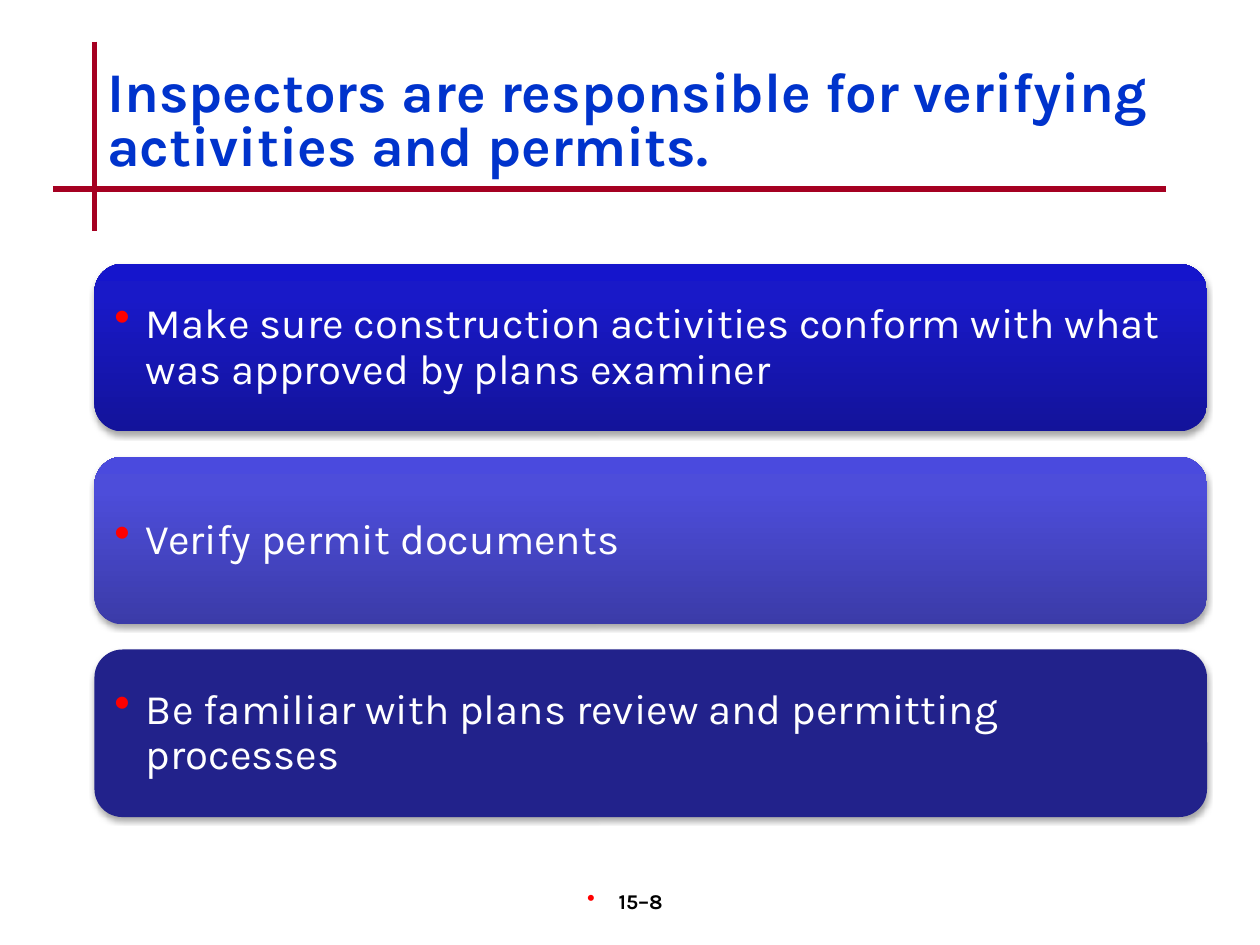
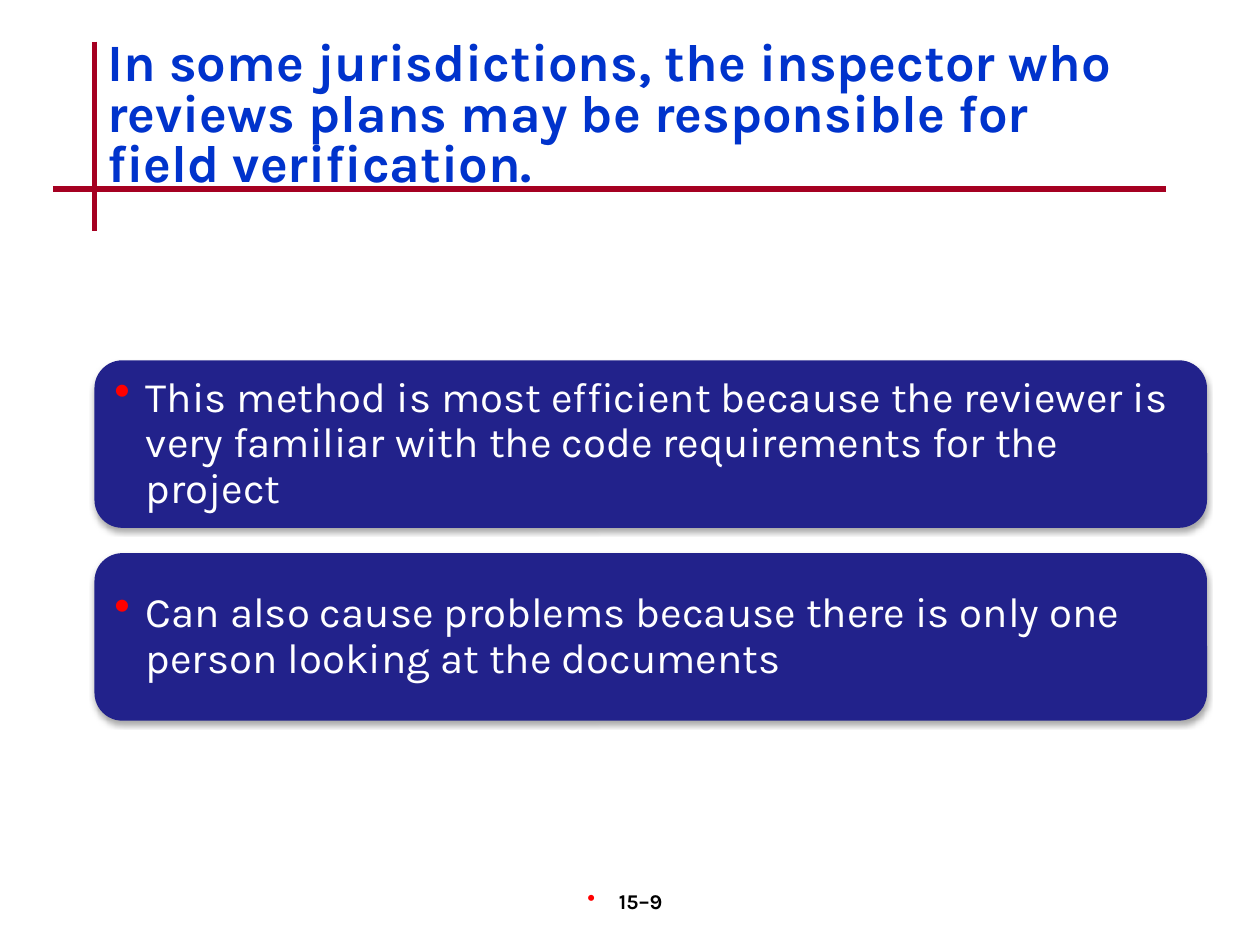
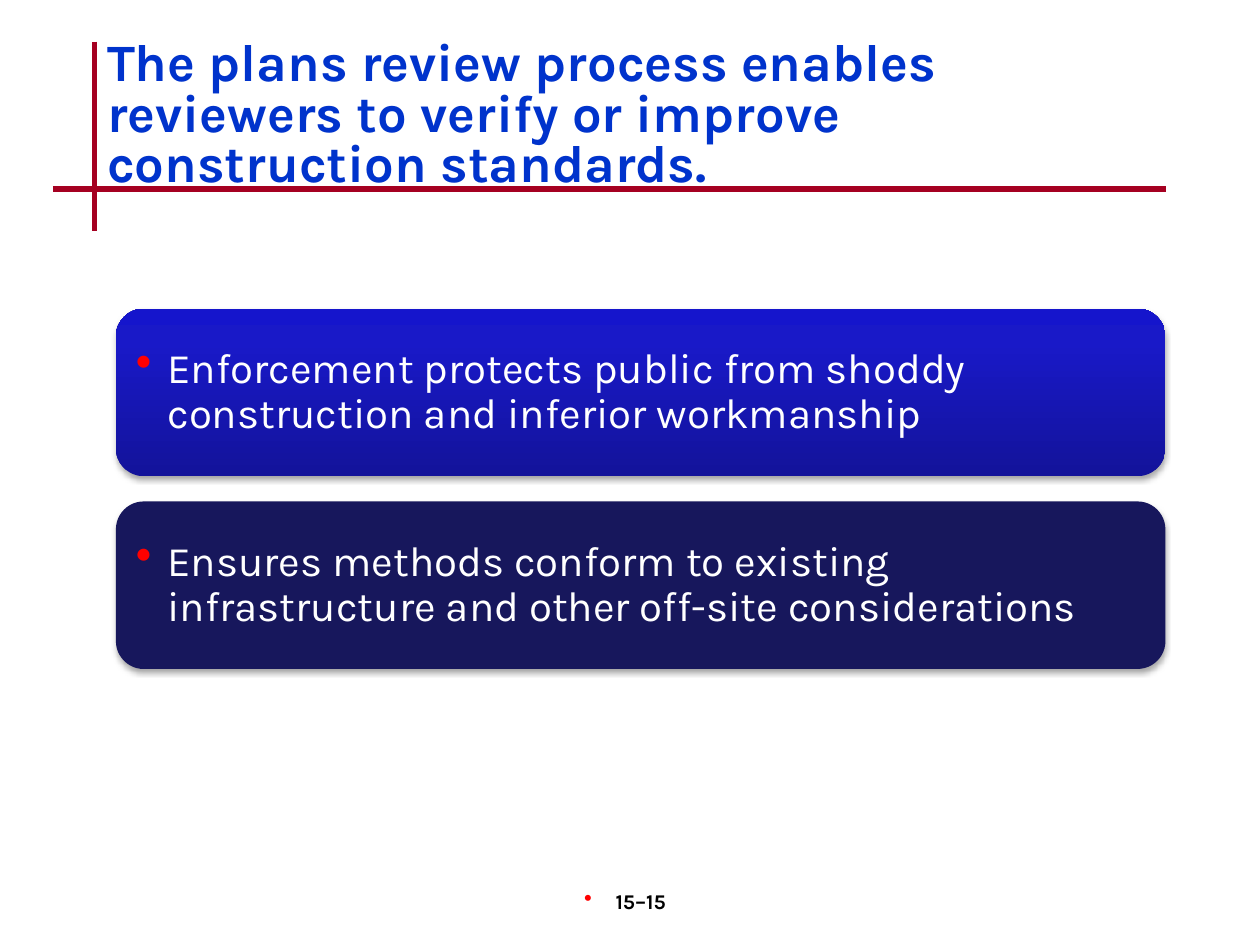
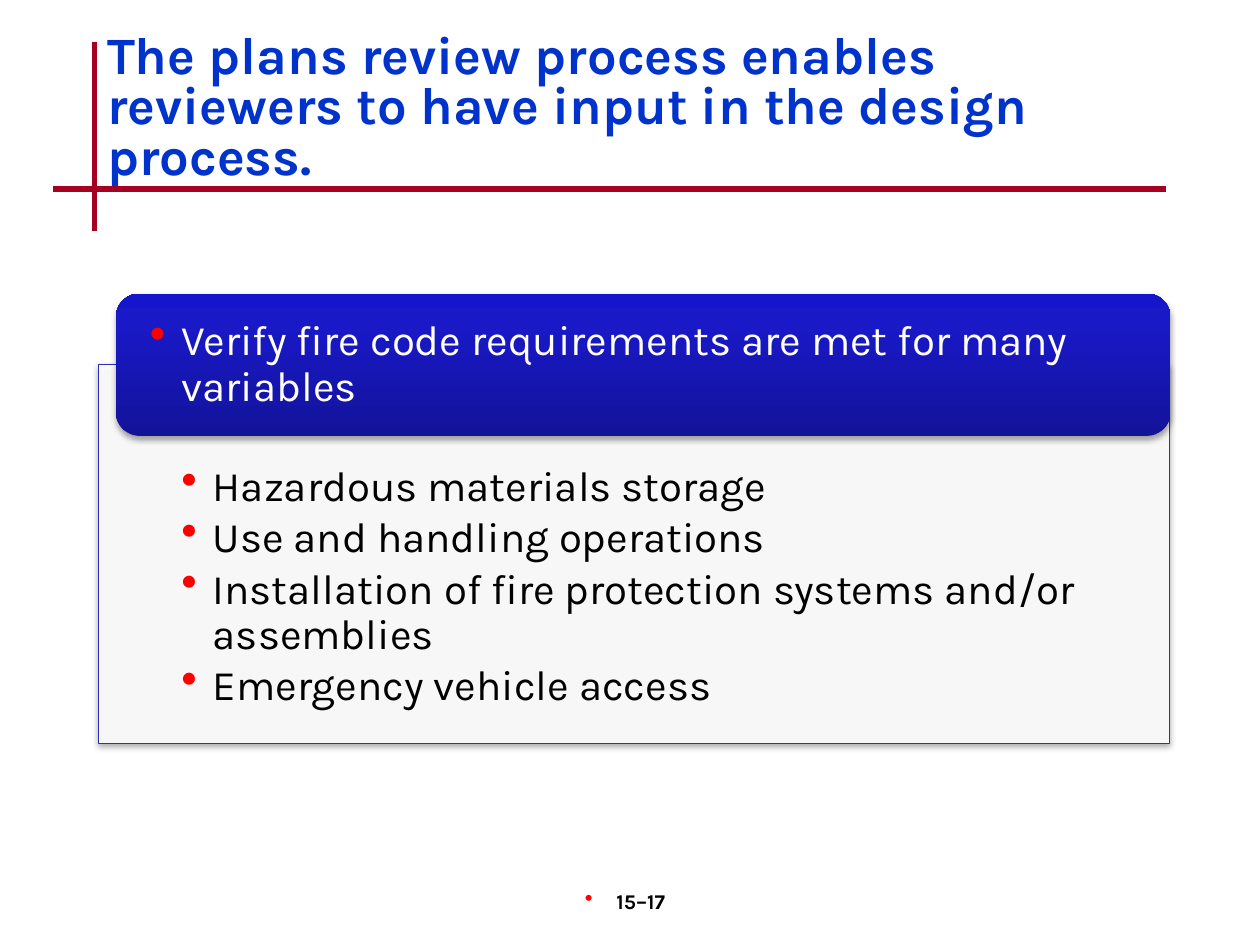
from dataclasses import dataclass
from typing import Optional, Union

from lxml.etree import SubElement
from pptx import Presentation
from pptx.dml.color import RGBColor
from pptx.enum.shapes import MSO_CONNECTOR, MSO_SHAPE
from pptx.enum.text import MSO_ANCHOR, MSO_AUTO_SIZE, PP_ALIGN
from pptx.oxml.ns import qn
from pptx.util import Inches, Pt


@dataclass(frozen=True)
class Gradient:
    stops: tuple[tuple[int, str], ...]


@dataclass(frozen=True)
class Theme:
    font: str = "Karla"
    title: str = "0033CC"
    rule: str = "A50021"
    bullet: str = "FF0000"
    dark_text: str = "000000"
    light_text: str = "FFFFFF"
    panel: str = "FFFFFF"
    panel_line: str = "2E2EB9"
    navy: str = "22228B"
    midnight: str = "17175C"
    royal: Gradient = Gradient(((0, "13139A"), (80, "1919C8"), (100, "1515CC")))
    violet: Gradient = Gradient(((0, "3B3BA8"), (80, "4D4DDA"), (100, "4A4ADE")))
    title_size: int = 32
    long_title_size: int = 30
    body_size: int = 24
    page_size: int = 12


THEME = Theme()
Fill = Union[str, Gradient]


@dataclass(frozen=True)
class Box:
    left: float
    top: float
    width: float
    height: float

    def emu(self) -> tuple:
        return tuple(Inches(v) for v in (self.left, self.top, self.width, self.height))

    def inset(self, d: float) -> "Box":
        return Box(self.left + d, self.top + d, self.width - 2 * d, self.height - 2 * d)


@dataclass(frozen=True)
class Card:
    text: str
    fill: Fill


@dataclass(frozen=True)
class Detail:
    header: Card
    items: tuple[str, ...]


@dataclass(frozen=True)
class Page:
    number: str
    title: str
    title_top: float
    title_size: int
    cards: tuple[Card, ...] = ()
    left: float = 0.75
    width: float = 8.83
    middle: float = 4.29
    detail: Optional[Detail] = None


CARD_HEIGHT, CARD_GAP, CARD_INSET = 1.33, 0.2, 0.06
LABEL_MARGINS = (0.1, 0.1, 0.1, 0.1)
HEADER_MARGINS = (0.22, 0, 0.22, 0)
PANEL_MARGINS = (0.66, 0.8, 0.66, 0.19)
PAGE_NUMBER_BOX = Box(3.92, 7, 2.08, 0.5)
PANEL_BOX = Box(0.78, 2.89, 8.5, 3.01)
HEADER_BOX = Box(0.92, 2.33, 8.37, 1.13)
RULES = ((0.75, 0.33, 0.75, 1.83), (0.42, 1.5, 9.25, 1.5))

PAGES = (
    Page(
        "15–8",
        "Inspectors are responsible for verifying activities and permits.",
        0.5,
        THEME.title_size,
        (
            Card("Make sure construction activities conform with what was approved by plans examiner", THEME.royal),
            Card("Verify permit documents", THEME.violet),
            Card("Be familiar with plans review and permitting processes", THEME.navy),
        ),
    ),
    Page(
        "15–9",
        "In some jurisdictions, the inspector who reviews plans may be responsible for field verification.",
        0.28,
        THEME.long_title_size,
        (
            Card(
                "This method is most efficient because the reviewer is very familiar "
                "with the code requirements for the project",
                THEME.navy,
            ),
            Card("Can also cause problems because there is only one person looking at the documents", THEME.navy),
        ),
    ),
    Page(
        "15–15",
        "The plans review process enables reviewers to verify or improve construction standards.",
        0.28,
        THEME.long_title_size,
        (
            Card("Enforcement protects public from shoddy construction and inferior workmanship", THEME.royal),
            Card("Ensures methods conform to existing infrastructure and other off-site considerations", THEME.midnight),
        ),
        left=0.92,
        width=8.33,
        middle=3.88,
    ),
    Page(
        "15–17",
        "The plans review process enables reviewers to have input in the design process.",
        0.22,
        THEME.long_title_size,
        detail=Detail(
            Card("Verify fire code requirements are met for many variables", THEME.royal),
            (
                "Hazardous materials storage",
                "Use and handling operations",
                "Installation of fire protection systems and/or assemblies",
                "Emergency vehicle access",
            ),
        ),
    ),
)


def rgb(color: str) -> RGBColor:
    return RGBColor.from_string(color)


def add_color(parent, color: str, alpha: Optional[int] = None) -> None:
    clr = SubElement(parent, qn("a:srgbClr"), val=color)
    if alpha is not None:
        SubElement(clr, qn("a:alpha"), val=str(alpha * 1000))


def format_font(p, size: int, color: str, bold: bool = False) -> None:
    for r in p.runs:
        r.font.name = THEME.font
        r.font.size = Pt(size)
        r.font.bold = bold
        r.font.color.rgb = rgb(color)


def add_bullet(p) -> None:
    pPr = p._p.get_or_add_pPr()
    pPr.set("marL", str(Inches(0.25)))
    pPr.set("indent", str(-Inches(0.25)))
    add_color(SubElement(pPr, qn("a:buClr")), THEME.bullet)
    SubElement(pPr, qn("a:buSzPct"), val="110000")
    SubElement(pPr, qn("a:buChar"), char="•")


def add_label(shapes, box: Box, lines: tuple[str, ...], color: str, margins: tuple,
              anchor=MSO_ANCHOR.MIDDLE, level: int = 0, gap: float = 0) -> None:
    tf = shapes.add_textbox(*box.emu()).text_frame
    tf.word_wrap = True
    tf.vertical_anchor = anchor
    tf.margin_left, tf.margin_top, tf.margin_right, tf.margin_bottom = map(Inches, margins)
    tf.text = "\n".join(lines)
    for p in tf.paragraphs:
        p.level = level
        p.line_spacing = 0.9
        p.space_after = Pt(gap)
        add_bullet(p)
        format_font(p, THEME.body_size, color)


def add_shadow(sp) -> None:
    sp.shadow.inherit = False
    effects = sp._element.spPr.find(qn("a:effectLst"))
    shadow = SubElement(effects, qn("a:outerShdw"), blurRad=str(Pt(3.1)), dist=str(Pt(1.8)),
                        dir="5400000", rotWithShape="0")
    add_color(shadow, "000000", 35)


def apply_fill(sp, fill: Fill) -> None:
    if isinstance(fill, str):
        sp.fill.solid()
        sp.fill.fore_color.rgb = rgb(fill)
        return
    sp.fill.gradient()
    sp.fill.gradient_angle = 90
    stops = sp._element.spPr.find(qn("a:gradFill")).find(qn("a:gsLst"))
    for gs in list(stops):
        stops.remove(gs)
    for pos, color in fill.stops:
        add_color(SubElement(stops, qn("a:gs"), pos=str(pos * 1000)), color)


def add_card(shapes, box: Box, card: Card, inset: float, margins: tuple) -> None:
    sp = shapes.add_shape(MSO_SHAPE.ROUNDED_RECTANGLE, *box.emu())
    apply_fill(sp, card.fill)
    sp.line.fill.background()
    add_shadow(sp)
    add_label(shapes, box.inset(inset), (card.text,), THEME.light_text, margins)


def add_cards(s, page: Page) -> None:
    shapes = s.shapes.add_group_shape().shapes
    step = CARD_HEIGHT + CARD_GAP
    top = page.middle - (len(page.cards) * step - CARD_GAP) / 2
    for i, card in enumerate(page.cards):
        box = Box(page.left, top + i * step, page.width, CARD_HEIGHT)
        add_card(shapes, box, card, CARD_INSET, LABEL_MARGINS)


def add_detail(s, detail: Detail) -> None:
    shapes = s.shapes.add_group_shape().shapes
    panel = shapes.add_shape(MSO_SHAPE.RECTANGLE, *PANEL_BOX.emu())
    apply_fill(panel, THEME.panel)
    clr = panel._element.spPr.find(qn("a:solidFill")).find(qn("a:srgbClr"))
    SubElement(clr, qn("a:alpha"), val="90000")
    panel.line.color.rgb = rgb(THEME.panel_line)
    panel.line.width = Pt(0.75)
    add_shadow(panel)
    add_label(shapes, PANEL_BOX, detail.items, THEME.dark_text, PANEL_MARGINS,
              MSO_ANCHOR.TOP, level=1, gap=3.5)
    add_card(shapes, HEADER_BOX, detail.header, 0.05, HEADER_MARGINS)


def add_rules(s) -> None:
    for ends in RULES:
        line = s.shapes.add_connector(MSO_CONNECTOR.STRAIGHT, *map(Inches, ends))
        line.line.color.rgb = rgb(THEME.rule)
        line.line.width = Pt(3)
        SubElement(line._element.spPr, qn("a:effectLst"))


def add_page_number(s, number: str) -> None:
    tf = s.shapes.add_textbox(*PAGE_NUMBER_BOX.emu()).text_frame
    tf.word_wrap = True
    tf.text = number
    p = tf.paragraphs[0]
    p.alignment = PP_ALIGN.CENTER
    add_bullet(p)
    format_font(p, THEME.page_size, THEME.dark_text, bold=True)


def set_title(s, page: Page) -> None:
    sp = s.shapes.title
    sp.left, sp.top, sp.width, sp.height = Box(0.75, page.title_top, 8.5, 1).emu()
    tf = sp.text_frame
    tf.text = page.title
    tf.word_wrap = True
    tf.auto_size = MSO_AUTO_SIZE.NONE
    tf.vertical_anchor = MSO_ANCHOR.TOP
    p = tf.paragraphs[0]
    p.alignment = PP_ALIGN.LEFT
    p.line_spacing = 0.8
    format_font(p, page.title_size, THEME.title, bold=True)


def add_page(prs, page: Page) -> None:
    s = prs.slides.add_slide(prs.slide_layouts[5])
    add_rules(s)
    add_page_number(s, page.number)
    set_title(s, page)
    if page.cards:
        add_cards(s, page)
    if page.detail:
        add_detail(s, page.detail)


def main() -> None:
    prs = Presentation()
    prs.slide_width, prs.slide_height = Inches(10), Inches(7.5)
    for page in PAGES:
        add_page(prs, page)
    prs.save("out.pptx")


if __name__ == "__main__":
    main()
